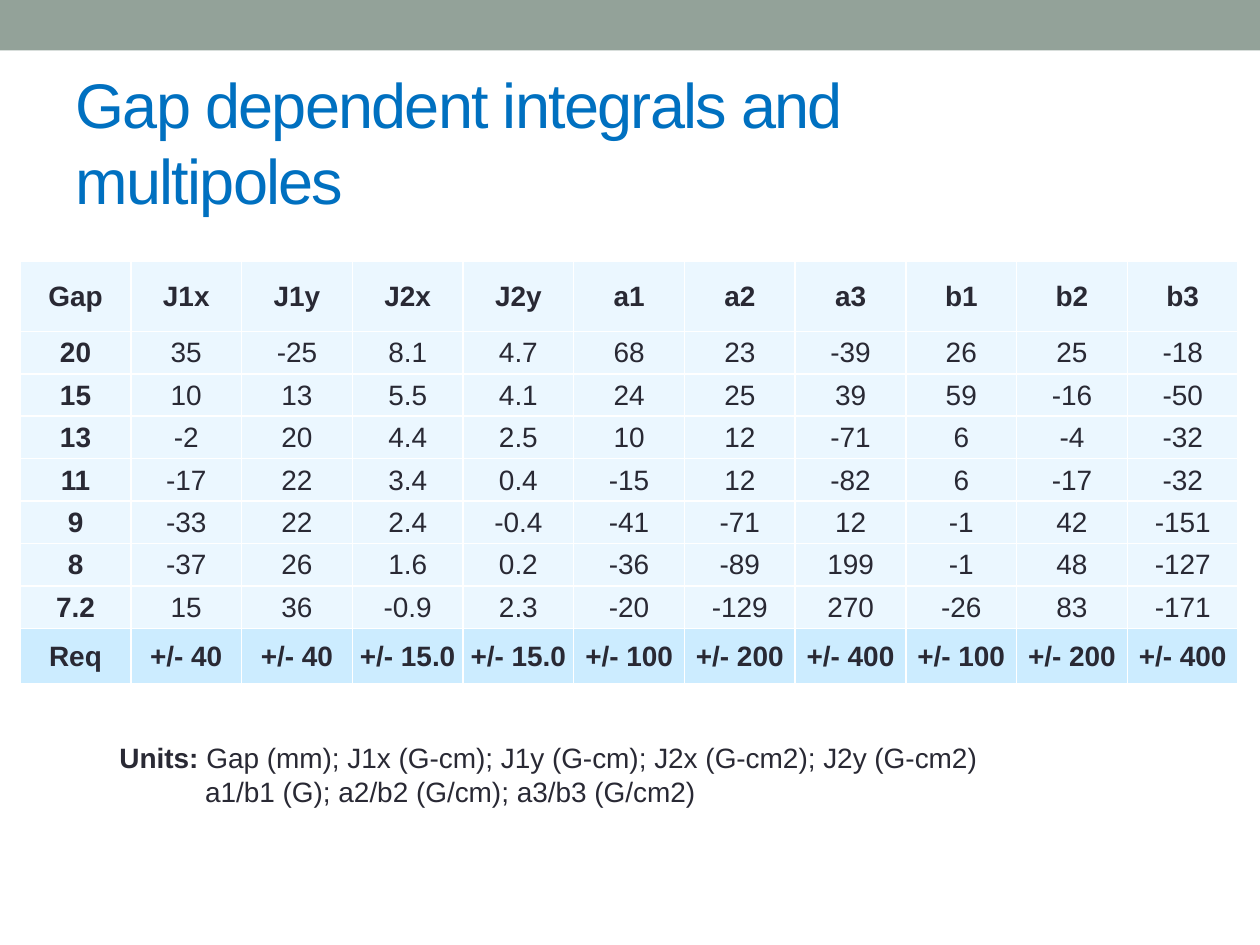
from pptx import Presentation
from pptx.dml.color import RGBColor
from pptx.enum.shapes import MSO_SHAPE
from pptx.enum.text import MSO_ANCHOR, MSO_AUTO_SIZE, PP_ALIGN
from pptx.oxml import parse_xml
from pptx.oxml.ns import nsdecls
from pptx.util import Inches, Pt

RECT = MSO_SHAPE.RECTANGLE
MIDDLE = MSO_ANCHOR.MIDDLE
NO_FIT = MSO_AUTO_SIZE.NONE
LEFT, CENTER = PP_ALIGN.LEFT, PP_ALIGN.CENTER

THEME = {
    "font": "Arial",
    "title": RGBColor.from_string("0070C0"),
    "text": RGBColor.from_string("292934"),
    "band": RGBColor.from_string("93A299"),
    "row": RGBColor.from_string("EBF7FF"),
    "limit": RGBColor.from_string("CCECFF"),
    "rule": "FFFFFF",
    "title_size": Pt(36),
    "text_size": Pt(16),
}

ROWS = [
    ["Gap", "J1x", "J1y", "J2x", "J2y", "a1", "a2", "a3", "b1", "b2", "b3"],
    ["20", "35", "-25", "8.1", "4.7", "68", "23", "-39", "26", "25", "-18"],
    ["15", "10", "13", "5.5", "4.1", "24", "25", "39", "59", "-16", "-50"],
    ["13", "-2", "20", "4.4", "2.5", "10", "12", "-71", "6", "-4", "-32"],
    ["11", "-17", "22", "3.4", "0.4", "-15", "12", "-82", "6", "-17", "-32"],
    ["9", "-33", "22", "2.4", "-0.4", "-41", "-71", "12", "-1", "42", "-151"],
    ["8", "-37", "26", "1.6", "0.2", "-36", "-89", "199", "-1", "48", "-127"],
    ["7.2", "15", "36", "-0.9", "2.3", "-20", "-129", "270", "-26", "83", "-171"],
    ["Req", "+/- 40", "+/- 40", "+/- 15.0", "+/- 15.0", "+/- 100", "+/- 200",
     "+/- 400", "+/- 100", "+/- 200", "+/- 400"],
]


def style(run, color="text", size="text_size", bold=False):
    font = run.font
    form = {"name": THEME["font"], "size": THEME[size], "bold": bold}
    for key, value in form.items():
        setattr(font, key, value)
    font.color.rgb = THEME[color]


def rule_cell(cell):
    """Draw a thin line on all four sides of a table cell."""
    props = cell._tc.get_or_add_tcPr()
    for side in "LRTB":
        props.append(parse_xml(
            f'<a:ln{side} {nsdecls("a")} w="{Pt(1)}"><a:solidFill>'
            f'<a:srgbClr val="{THEME["rule"]}"/></a:solidFill></a:ln{side}>'))


deck = Presentation()
deck.slide_width, deck.slide_height = Inches(10), Inches(7.5)
slide = deck.slides.add_slide(deck.slide_layouts[5])
shapes = slide.shapes

# Top band
band = shapes.add_shape(RECT, 0, 0, Inches(10), Inches(0.4))
band.shadow.inherit = False
band.fill.solid()
band.fill.fore_color.rgb = THEME["band"]
band.line.fill.background()

# Title
title = shapes.title
place = {"left": 0.5, "top": 0.58, "width": 9, "height": 1.08}
for key, value in place.items():
    setattr(title, key, Inches(value))
frame = title.text_frame
form = {"text": "Gap dependent integrals and \vmultipoles", "word_wrap": True,
        "auto_size": NO_FIT, "vertical_anchor": MIDDLE}
for key, value in form.items():
    setattr(frame, key, value)
line = frame.paragraphs[0]
line.alignment = LEFT
for run in line.runs:
    style(run, "title", "title_size")
    run.font._element.set("spc", "-100")

# Table of integrals and multipoles
count, last = len(ROWS[0]), len(ROWS) - 1
frame = shapes.add_table(len(ROWS), count, Inches(0.16), Inches(2.07),
                         Inches(9.67), Inches(3.36))
table = frame.table
table.first_row = table.horz_banding = False
for col in table.columns:
    col.width = Inches(9.67 / count)
form = {"margin_left": Inches(0.01), "margin_right": Inches(0.01),
        "margin_top": Inches(0.01), "margin_bottom": 0,
        "vertical_anchor": MIDDLE}
for r, row in enumerate(ROWS):
    table.rows[r].height = Inches({0: 0.56, last: 0.44}.get(r, 0.337))
    for c, value in enumerate(row):
        cell = table.cell(r, c)
        for key, setting in form.items():
            setattr(cell, key, setting)
        rule_cell(cell)
        cell.fill.solid()
        cell.fill.fore_color.rgb = THEME["limit" if r == last else "row"]
        line = cell.text_frame.paragraphs[0]
        line.alignment = CENTER
        run = line.add_run()
        run.text = value
        style(run, bold=r in (0, last) or c == 0)

# Units, with the second line indented past the label
UNITS = [
    [("Units: ", True),
     ("Gap (mm); J1x (G-cm); J1y (G-cm); J2x (G-cm2); J2y (G-cm2)", False)],
    [("a1/b1 (G); a2/b2 (G/cm); a3/b3 (G/cm2)", False)],
]
note = shapes.add_textbox(Inches(0.85), Inches(5.83), Inches(7.97), Inches(0.91))
frame = note.text_frame
frame.word_wrap = True
for i, parts in enumerate(UNITS):
    line = frame.add_paragraph() if i else frame.paragraphs[0]
    if i:
        line._p.get_or_add_pPr().set("marL", str(Inches(0.68)))
    for text, bold in parts:
        run = line.add_run()
        run.text = text
        style(run, bold=bold)

deck.save("out.pptx")
